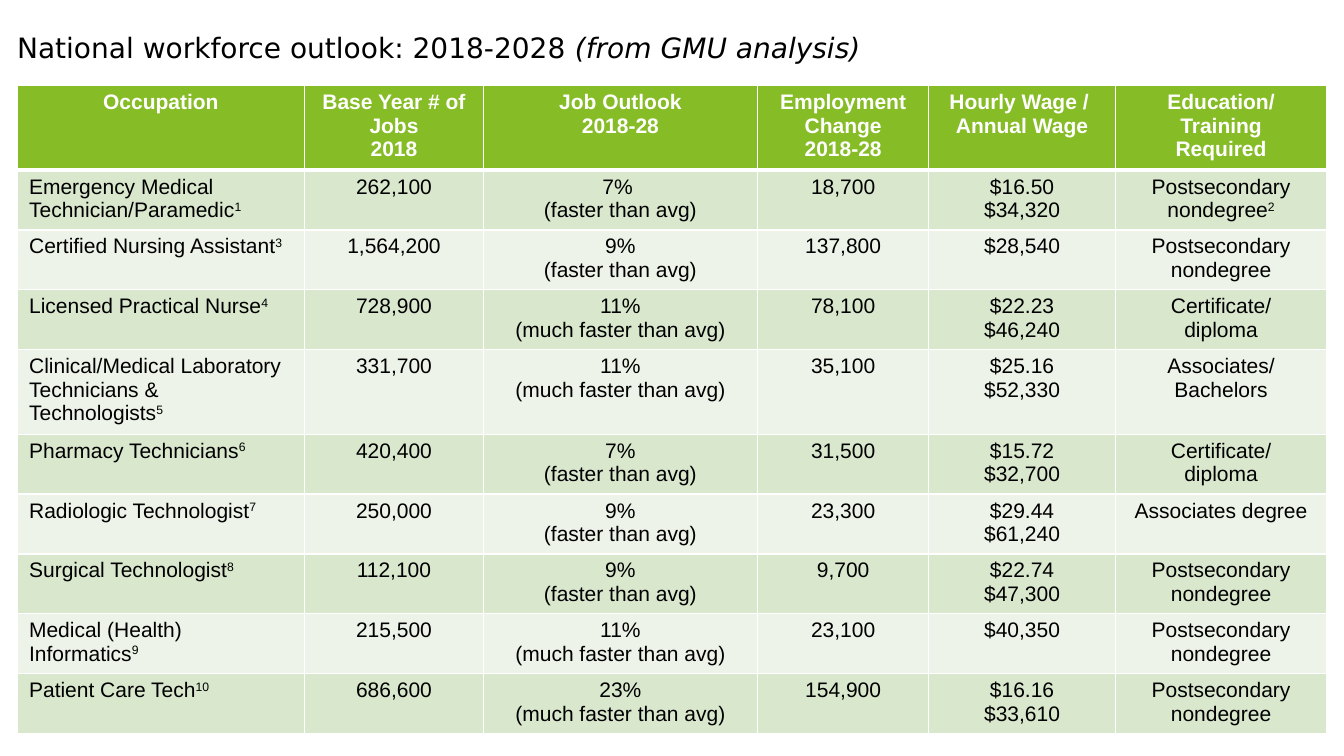
from lxml import etree
from pptx import Presentation
from pptx.dml.color import RGBColor
from pptx.enum.text import MSO_ANCHOR, PP_ALIGN
from pptx.oxml.ns import qn
from pptx.util import Pt

LEFT, CENTER = PP_ALIGN.LEFT, PP_ALIGN.CENTER
TOP = MSO_ANCHOR.TOP

# Content: a line break starts a new paragraph, "^" precedes a footnote number
TITLE, TITLE_SOURCE = "National workforce outlook: 2018-2028 ", "(from GMU analysis)"
HEADINGS = (
    "Occupation", "Base Year # of Jobs\n2018", "Job Outlook\n2018-28",
    "Employment Change\n2018-28", "Hourly Wage / \nAnnual Wage",
    "Education/ Training\nRequired",
)
FASTER, MUCH_FASTER = "(faster than avg)", "(much faster than avg)"
NONDEGREE, CERTIFICATE = "Postsecondary nondegree", "Certificate/\ndiploma"
OCCUPATIONS = [
    ("Emergency Medical Technician/Paramedic^1", "262,100", f"7% \n{FASTER}",
     "18,700", "$16.50\n$34,320", f"{NONDEGREE}^2"),
    ("Certified Nursing Assistant^3", "1,564,200", f"9%\n{FASTER}",
     "137,800", "$28,540", NONDEGREE),
    ("Licensed Practical Nurse^4", "728,900", f"11%\n{MUCH_FASTER}",
     "78,100", "$22.23\n$46,240", CERTIFICATE),
    ("Clinical/Medical Laboratory Technicians & Technologists^5", "331,700",
     f"11%\n{MUCH_FASTER}", "35,100", "$25.16\n$52,330", "Associates/\nBachelors"),
    ("Pharmacy Technicians^6", "420,400", f"7%\n{FASTER}",
     "31,500", "$15.72\n$32,700", CERTIFICATE),
    ("Radiologic Technologist^7", "250,000", f"9%\n{FASTER}",
     "23,300", "$29.44\n$61,240", "Associates degree"),
    ("Surgical Technologist^8", "112,100", f"9%\n{FASTER}",
     "9,700", "$22.74\n$47,300", NONDEGREE),
    ("Medical (Health) Informatics^9", "215,500", f"11%\n{MUCH_FASTER}",
     "23,100", "$40,350", NONDEGREE),
    ("Patient Care Tech^10", "686,600", f"23%\n{MUCH_FASTER}",
     "154,900", "$16.16\n$33,610", NONDEGREE),
]

# Layout, in points
MARGIN_LEFT, TABLE_TOP = 12.2, 61.2
COLUMN_WIDTHS = (205.4, 127.7, 195.8, 122.4, 133.2, 151.2)
TWO_LINES, THREE_LINES = 42.8, 60.3
TALL_ROWS = (0, 4)
ROW_HEIGHTS = [THREE_LINES if row in TALL_ROWS else TWO_LINES
               for row in range(len(OCCUPATIONS) + 1)]

GREEN, DARK_BAND, LIGHT_BAND = "86BC25", "D9E7CD", "EDF3E8"
WHITE, BLACK = "FFFFFF", "000000"


def color(hex_value):
    return RGBColor.from_string(hex_value)


def set_font(font, name, size, hex_value, bold=False):
    font.name, font.size, font.bold = name, Pt(size), bold
    font.color.rgb = color(hex_value)


def set_borders(cell, top, bottom):
    properties = cell._tc.get_or_add_tcPr()
    widths = {"a:lnL": 1, "a:lnR": 1, "a:lnT": top, "a:lnB": bottom}
    for position, (side, width) in enumerate(widths.items()):
        border = etree.Element(qn(side), w=str(Pt(width)))
        fill = etree.SubElement(border, qn("a:solidFill"))
        etree.SubElement(fill, qn("a:srgbClr"), val=WHITE)
        properties.insert(position, border)


def fill_cell(cell, content, background, text_color, alignment, bold):
    cell.margin_left = cell.margin_right = Pt(8.64)
    cell.margin_top = cell.margin_bottom = Pt(3.6)
    cell.vertical_anchor = TOP
    cell.fill.solid()
    cell.fill.fore_color.rgb = color(background)
    text, _, footnote = content.partition("^")
    cell.text_frame.text = text
    if footnote:
        marker = cell.text_frame.paragraphs[-1].add_run()
        marker.text = footnote
        marker._r.get_or_add_rPr().set("baseline", "30000")
    for paragraph in cell.text_frame.paragraphs:
        paragraph.alignment = alignment
        for run in paragraph.runs:
            set_font(run.font, "Arial", 15, text_color, bold)


presentation = Presentation()
presentation.slide_width, presentation.slide_height = Pt(960), Pt(540)
slide = presentation.slides.add_slide(presentation.slide_layouts[5])

# Title
title = slide.shapes.title
title.left, title.top, title.width, title.height = Pt(MARGIN_LEFT), Pt(21.6), Pt(780), Pt(67)
frame = title.text_frame
frame.margin_left = frame.margin_right = frame.margin_top = frame.margin_bottom = 0
frame.vertical_anchor = TOP
frame.word_wrap = True
heading = frame.paragraphs[0]
heading.text = TITLE
heading.alignment = LEFT
source = heading.add_run()
source.text = TITLE_SOURCE
for run in heading.runs:
    set_font(run.font, "DejaVu Sans", 20, BLACK)
source.font.italic = True

# Workforce table
outlook = slide.shapes.add_table(
    len(ROW_HEIGHTS), len(COLUMN_WIDTHS), Pt(MARGIN_LEFT), Pt(TABLE_TOP),
    Pt(sum(COLUMN_WIDTHS)), Pt(sum(ROW_HEIGHTS))).table
for column, width in zip(outlook.columns, COLUMN_WIDTHS):
    column.width = Pt(width)
for row, height in zip(outlook.rows, ROW_HEIGHTS):
    row.height = Pt(height)

for row, contents in enumerate([HEADINGS, *OCCUPATIONS]):
    is_header = row == 0
    band = DARK_BAND if row % 2 else LIGHT_BAND
    for column, content in enumerate(contents):
        cell = outlook.cell(row, column)
        fill_cell(cell, content,
                  background=GREEN if is_header else band,
                  text_color=WHITE if is_header else BLACK,
                  alignment=CENTER if is_header or column else LEFT,
                  bold=is_header)
        set_borders(cell, top=3 if row == 1 else 1, bottom=3 if is_header else 1)

presentation.save("out.pptx")
